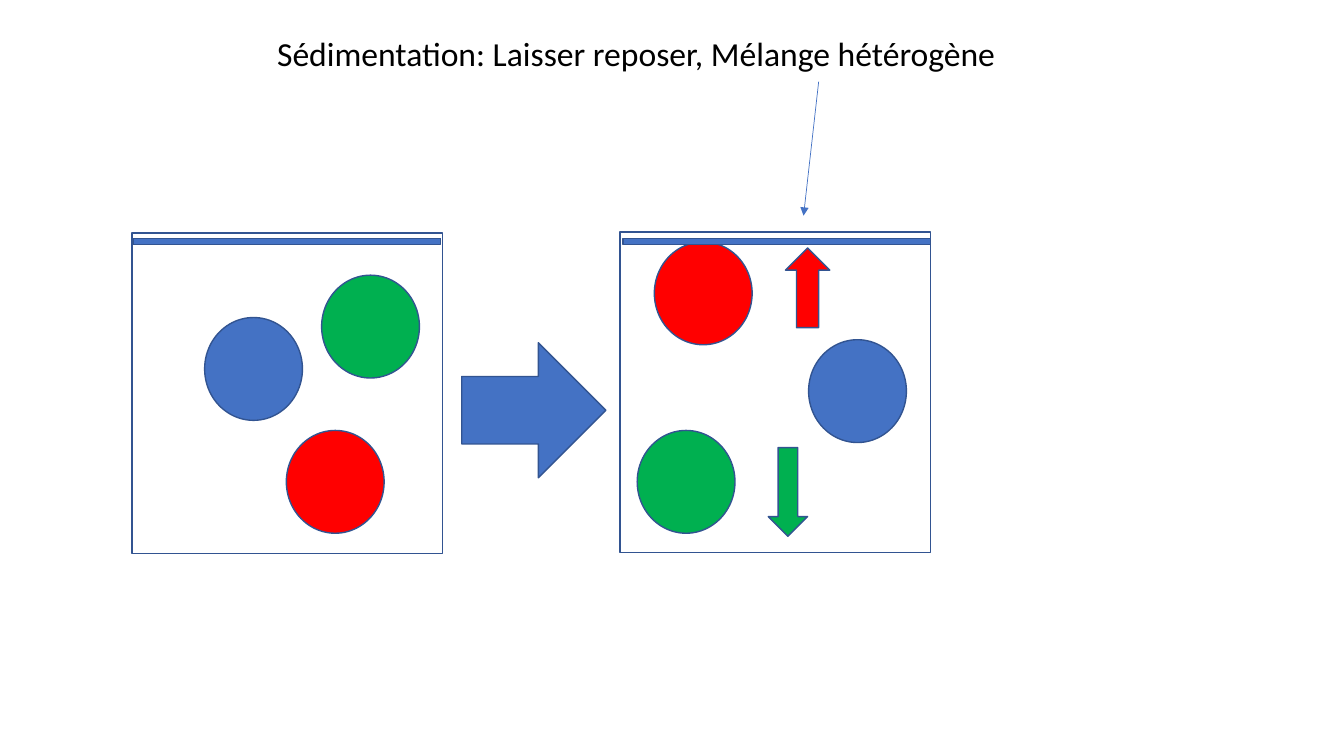
import pptx
import pptx.util
import pptx.dml.color
import pptx.enum.shapes
import pptx.enum.text
import pptx.oxml.ns
from lxml import etree

Inches, Pt = pptx.util.Inches, pptx.util.Pt
SHAPE = pptx.enum.shapes.MSO_SHAPE

COLORS = {
    "blue": "4472C4",
    "green": "00B050",
    "red": "FF0000",
    "outline": "325491",
    "text": "000000",
}
BEAKER_W, BEAKER_H = 3.08, 3.18
PARTICLE_W, PARTICLE_H = 0.97, 1.02
SURFACE_W, SURFACE_H = 4.15, 0.25


def rgb(name):
    return pptx.dml.color.RGBColor.from_string(COLORS[name])


def add_title(s, text):
    sp = s.shapes.title
    sp.left, sp.top = Inches(1.31), Inches(0.32)
    sp.width, sp.height = Inches(10), Inches(1.81)
    tf = sp.text_frame
    tf.text = text
    tf.word_wrap = True
    tf.auto_size = pptx.enum.text.MSO_AUTO_SIZE.NONE
    tf.vertical_anchor = pptx.enum.text.MSO_ANCHOR.TOP
    p = tf.paragraphs[0]
    p.alignment = pptx.enum.text.PP_ALIGN.CENTER
    p.line_spacing = 0.9
    font = p.runs[0].font
    font.name, font.size = "Calibri", Pt(24)
    font.color.rgb = rgb("text")


def add_figure(s, kind, x, y, w, h, fill=None):
    sp = s.shapes.add_shape(kind, Inches(x), Inches(y), Inches(w), Inches(h))
    sp.shadow.inherit = False
    if fill:
        sp.fill.solid()
        sp.fill.fore_color.rgb = rgb(fill)
    else:
        sp.fill.background()
    sp.line.color.rgb = rgb("outline")
    sp.line.width = Pt(1)


def add_pointer(s, x1, y1, x2, y2):
    line = s.shapes.add_connector(
        pptx.enum.shapes.MSO_CONNECTOR.STRAIGHT,
        Inches(x1), Inches(y1), Inches(x2), Inches(y2))
    line.line.color.rgb = rgb("blue")
    line.line.width = Pt(0.5)
    qn = pptx.oxml.ns.qn
    etree.SubElement(line.line._get_or_add_ln(), qn("a:tailEnd"), type="triangle")
    etree.SubElement(line._element.spPr, qn("a:effectLst"))


def main():
    prs = pptx.Presentation()
    prs.slide_width, prs.slide_height = Inches(13.33), Inches(7.5)
    s = prs.slides.add_slide(prs.slide_layouts[5])
    add_title(s, "Sédimentation: Laisser reposer, Mélange hétérogène")

    # Beakers before and after settling
    for x, y in [(1.31, 2.31), (6.15, 2.3)]:
        add_figure(s, SHAPE.RECTANGLE, x, y, BEAKER_W, BEAKER_H)

    # Particles
    for x, y, color in [
        (2.03, 3.15, "blue"), (3.19, 2.73, "green"), (2.84, 4.27, "red"),
        (6.49, 2.4, "red"), (8.02, 3.37, "blue"), (6.32, 4.27, "green"),
    ]:
        add_figure(s, SHAPE.OVAL, x, y, PARTICLE_W, PARTICLE_H, color)

    # Pointer from the title, then the process and motion arrows
    add_pointer(s, 8.12, 0.81, 7.97, 2.14)
    add_figure(s, SHAPE.RIGHT_ARROW, 4.58, 3.4, 1.43, 1.34, "blue")
    add_figure(s, SHAPE.UP_ARROW, 7.79, 2.46, 0.44, 0.79, "red")
    add_figure(s, SHAPE.DOWN_ARROW, 7.62, 4.44, 0.39, 0.88, "green")

    # Liquid surfaces
    for x in (5.63, 0.77):
        add_figure(s, SHAPE.MATH_MINUS, x, 2.27, SURFACE_W, SURFACE_H, "blue")

    prs.save("out.pptx")


if __name__ == "__main__":
    main()
